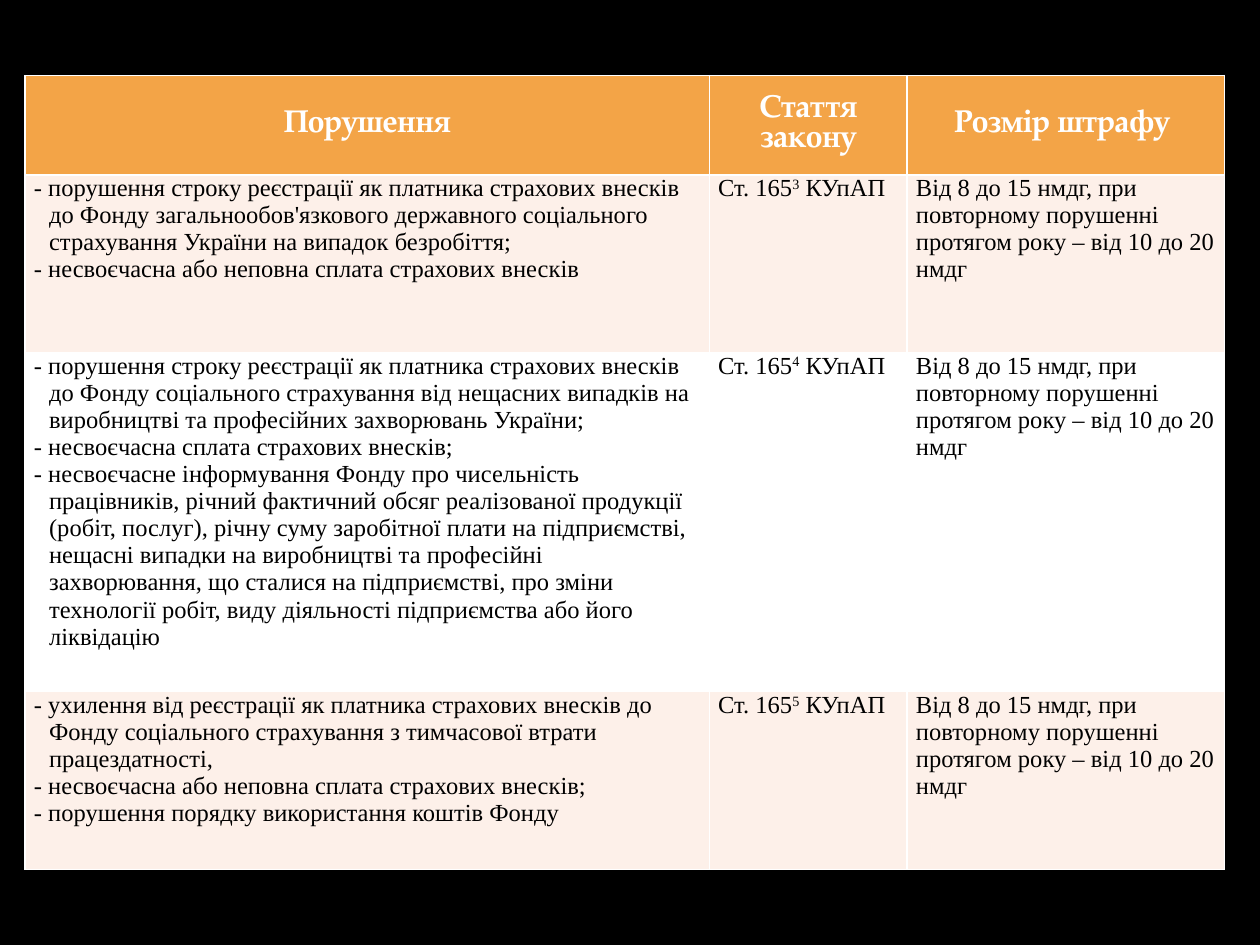
from dataclasses import dataclass

from lxml.etree import SubElement
from pptx import Presentation
from pptx.dml.color import RGBColor
from pptx.enum.text import MSO_ANCHOR, PP_ALIGN
from pptx.oxml.ns import qn
from pptx.util import Inches, Pt


@dataclass(frozen=True)
class Theme:
    background: str = "000000"
    header_fill: str = "F3A447"
    header_text: str = "FFFFFF"
    body_text: str = "000000"
    band_fills: tuple = ("FDF0E9", "FFFFFF")
    border: str = "FFFFFF"
    border_width: float = 1
    header_font: str = "TeX Gyre Pagella"
    body_font: str = "Times New Roman"
    header_size: int = 18
    body_size: int = 14
    body_inset: float = 0.07
    hanging: float = 0.12


HEADERS = ("Порушення", "Стаття закону", "Розмір штрафу ")
FINE = "Від 8 до 15 нмдг, при повторному порушенні протягом року – від 10 до 20 нмдг"
VIOLATIONS = (
    ("3", (
        "- порушення строку реєстрації як платника страхових внесків до Фонду "
        "загальнообов'язкового державного соціального страхування України "
        "на випадок безробіття;",
        "- несвоєчасна або неповна сплата страхових внесків",
    )),
    ("4", (
        "- порушення строку реєстрації як платника страхових внесків до Фонду "
        "соціального страхування від нещасних випадків на виробництві та "
        "професійних захворювань України;",
        "- несвоєчасна сплата страхових внесків;",
        "- несвоєчасне інформування Фонду про чисельність працівників, річний "
        "фактичний обсяг реалізованої продукції (робіт, послуг), річну суму "
        "заробітної плати на підприємстві, нещасні випадки на виробництві та "
        "професійні захворювання, що сталися на підприємстві, про зміни "
        "технології робіт, виду діяльності підприємства або його ліквідацію",
    )),
    ("5", (
        "- ухилення від реєстрації як платника страхових внесків до Фонду "
        "соціального страхування з тимчасової втрати працездатності,",
        "- несвоєчасна або неповна сплата страхових внесків;",
        "- порушення порядку використання коштів Фонду",
    )),
)

# Shares of the slide's width and height
TABLE_LEFT, TABLE_TOP = 0.02, 0.08
COLUMN_SHARES = (0.543, 0.157, 0.252)
ROW_SHARES = (0.105, 0.188, 0.359, 0.188)


def write(paragraph, *parts, font, size, color, bold=False,
          align=PP_ALIGN.LEFT, hanging=0, raised=()):
    """Write the parts as runs; those whose index is in raised are superscript."""
    paragraph.alignment = align
    if hanging:
        properties = paragraph._p.get_or_add_pPr()
        properties.set("marL", str(Inches(hanging)))
        properties.set("indent", str(-Inches(hanging)))
    for index, part in enumerate(parts):
        run = paragraph.add_run()
        run.text = part
        run.font.name, run.font.size, run.font.bold = font, Pt(size), bold
        run.font.color.rgb = RGBColor.from_string(color)
        if index in raised:
            run.font._element.set("baseline", "30000")


class SlideBuilder:
    def __init__(self, presentation, theme):
        self.theme = theme
        self.width = presentation.slide_width
        self.height = presentation.slide_height
        self.slide = presentation.slides.add_slide(presentation.slide_layouts[6])
        background = self.slide.background.fill
        background.solid()
        background.fore_color.rgb = RGBColor.from_string(theme.background)

    def table(self, left, top, column_shares, row_shares):
        widths = [int(self.width * share) for share in column_shares]
        heights = [int(self.height * share) for share in row_shares]
        table = self.slide.shapes.add_table(
            len(heights), len(widths), int(self.width * left),
            int(self.height * top), sum(widths), sum(heights)).table
        for column, width in zip(table.columns, widths):
            column.width = width
        for row, height in zip(table.rows, heights):
            row.height = height
        return table

    def cell(self, cell, fill):
        properties = cell._tc.get_or_add_tcPr()
        for side in ("a:lnL", "a:lnR", "a:lnT", "a:lnB"):
            line = SubElement(properties, qn(side),
                              w=str(Pt(self.theme.border_width)))
            solid = SubElement(line, qn("a:solidFill"))
            SubElement(solid, qn("a:srgbClr"), val=self.theme.border)
        cell.fill.solid()
        cell.fill.fore_color.rgb = RGBColor.from_string(fill)

    def header_cell(self, cell, title):
        theme = self.theme
        self.cell(cell, theme.header_fill)
        cell.vertical_anchor = MSO_ANCHOR.MIDDLE
        write(cell.text_frame.paragraphs[0], title, font=theme.header_font,
              size=theme.header_size, color=theme.header_text, bold=True,
              align=PP_ALIGN.CENTER)

    def body_cell(self, cell, fill, *paragraphs, **text_format):
        """Fill a body cell; each paragraph is a tuple of text parts."""
        theme = self.theme
        self.cell(cell, fill)
        cell.margin_left = cell.margin_right = Inches(theme.body_inset)
        cell.margin_top = cell.margin_bottom = 0
        frame = cell.text_frame
        for index, parts in enumerate(paragraphs):
            paragraph = frame.add_paragraph() if index else frame.paragraphs[0]
            write(paragraph, *parts, font=theme.body_font, size=theme.body_size,
                  color=theme.body_text, **text_format)


def main():
    presentation = Presentation()
    presentation.slide_width, presentation.slide_height = Inches(10), Inches(7.5)
    theme = Theme()
    builder = SlideBuilder(presentation, theme)
    penalties = builder.table(TABLE_LEFT, TABLE_TOP, COLUMN_SHARES, ROW_SHARES)

    for column, title in enumerate(HEADERS):
        builder.header_cell(penalties.cell(0, column), title)
    for row, (article, offences) in enumerate(VIOLATIONS, start=1):
        fill = theme.band_fills[(row - 1) % len(theme.band_fills)]
        builder.body_cell(penalties.cell(row, 0), fill,
                          *((offence,) for offence in offences),
                          hanging=theme.hanging)
        builder.body_cell(penalties.cell(row, 1), fill,
                          ("Ст. 165", article, " КУпАП"),
                          align=PP_ALIGN.JUSTIFY, raised=(1,))
        builder.body_cell(penalties.cell(row, 2), fill, (FINE,))

    presentation.save("out.pptx")


if __name__ == "__main__":
    main()
